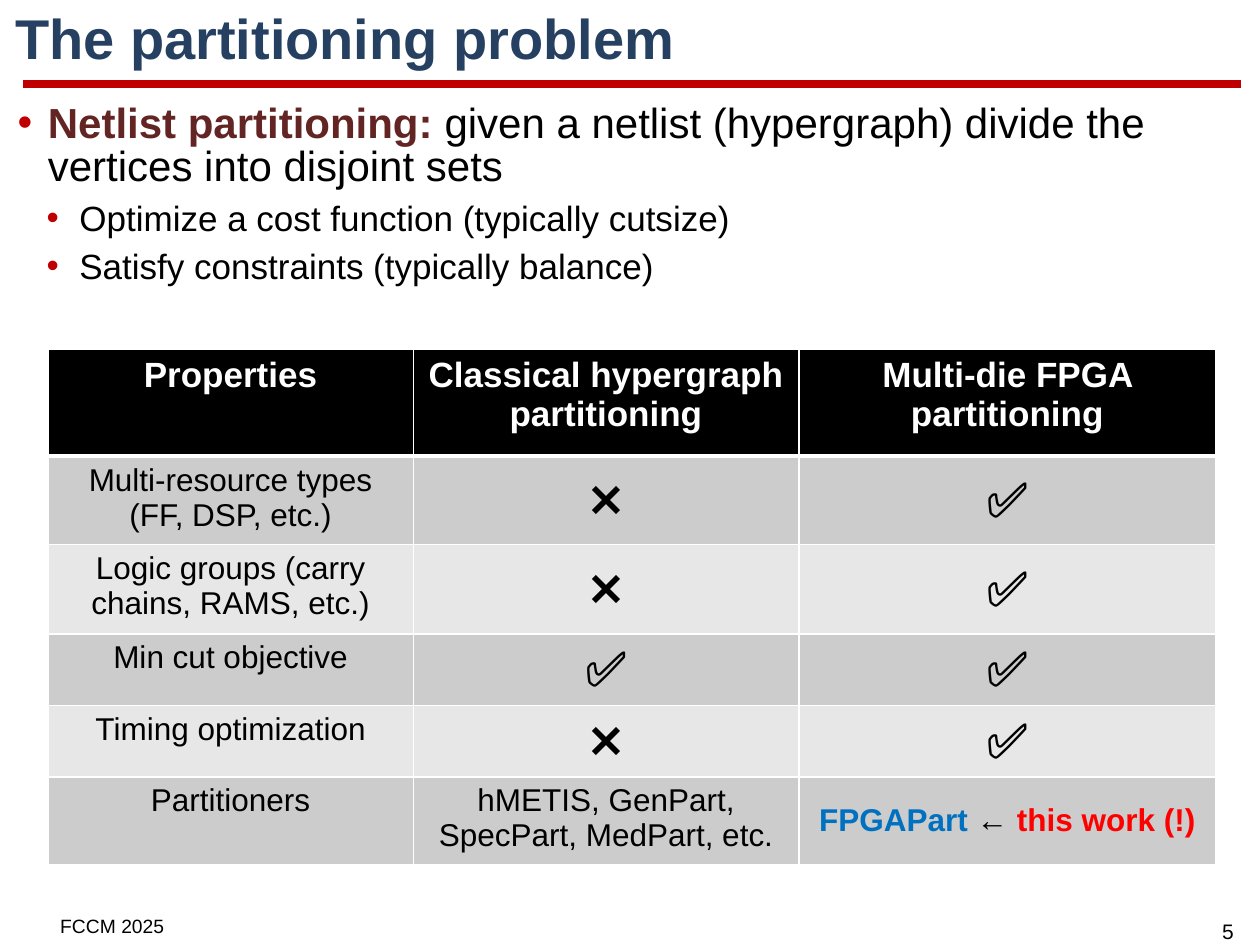
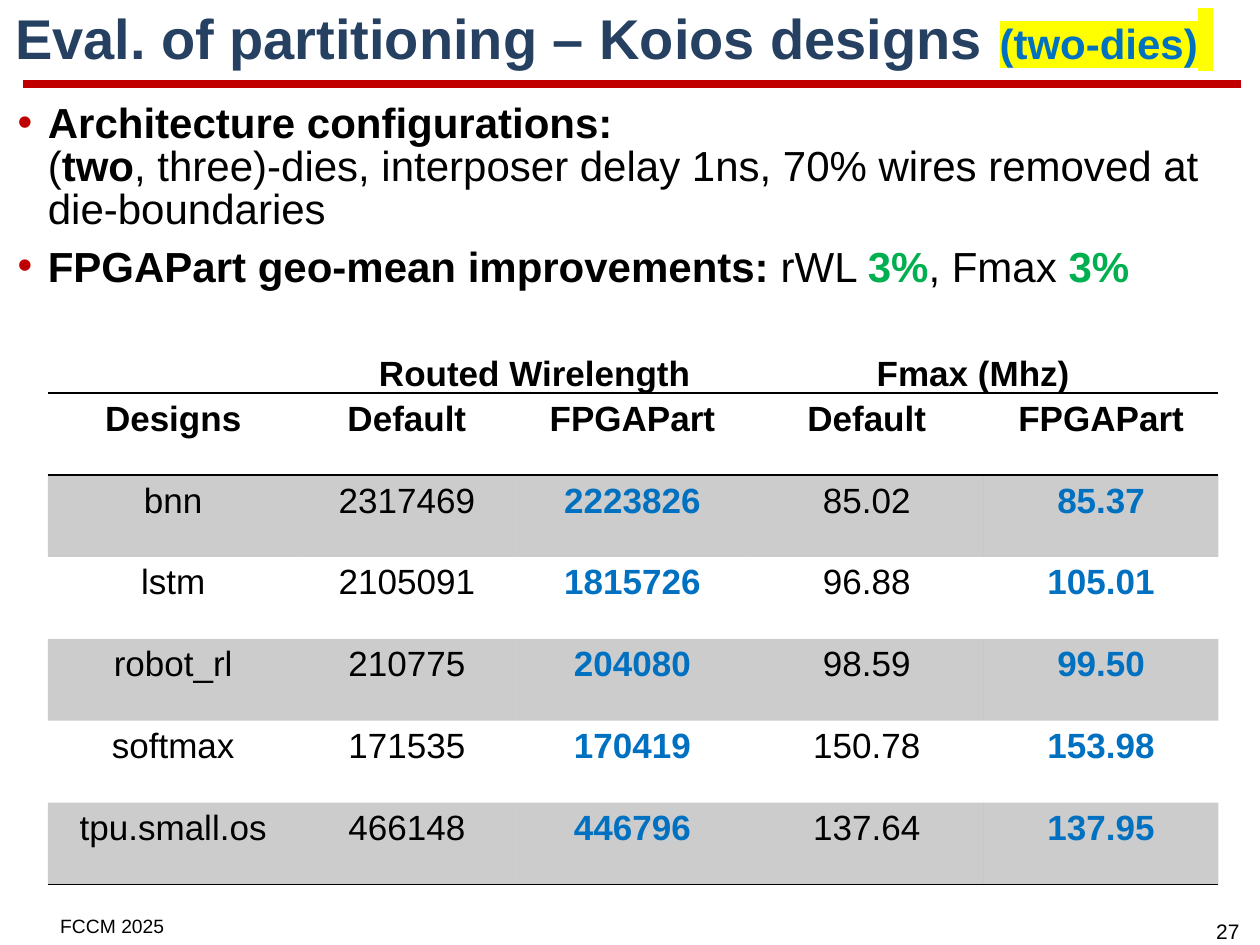
from dataclasses import dataclass
from typing import Optional

from lxml import etree
from pptx import Presentation
from pptx.dml.color import RGBColor
from pptx.enum.shapes import MSO_CONNECTOR
from pptx.enum.text import MSO_ANCHOR, MSO_AUTO_SIZE, PP_ALIGN
from pptx.oxml.ns import qn
from pptx.util import Inches, Pt

STRAIGHT = MSO_CONNECTOR.STRAIGHT
TOP, MIDDLE = MSO_ANCHOR.TOP, MSO_ANCHOR.MIDDLE
NO_AUTOFIT = MSO_AUTO_SIZE.NONE
LEFT, CENTER = PP_ALIGN.LEFT, PP_ALIGN.CENTER


class Theme:
    font = "Arial"
    black, white = "000000", "FFFFFF"
    navy, red, maroon = "254061", "C00000", "632523"
    blue, green, alert = "0070C0", "00B050", "FF0000"
    highlight = "FFFF00"
    bands = ("CCCCCC", "E7E7E7")
    title_size, body_sizes = 32, (24, 20)
    header_size, cell_size, mark_size = 20, 18, 28
    number_size, footer_size = 12, 11
    shade_alpha = 20


@dataclass
class Run:
    text: str
    color: str = Theme.black
    bold: bool = False
    size: Optional[int] = None
    highlight: Optional[str] = None


BREAK = Run("\n")
NO, YES = "❌", "✅"
FOOTER = "FCCM 2025"

PROBLEM = {
    "number": "5",
    "title": [Run("The partitioning problem", Theme.navy, True)],
    "bullets": [
        (0, [Run("Netlist partitioning:", Theme.maroon, True),
             Run(" given a netlist (hypergraph) divide the vertices into disjoint sets")]),
        (1, [Run("Optimize a cost function (typically cutsize)")]),
        (1, [Run("Satisfy constraints (typically balance)")]),
    ],
}
PROPERTY_HEADER = ["Properties", "Classical hypergraph partitioning",
                   "Multi-die FPGA partitioning"]
PROPERTY_ROWS = [
    ["Multi-resource types (FF, DSP, etc.)", NO, YES],
    ["Logic groups (carry chains, RAMS, etc.)", NO, YES],
    ["Min cut objective", YES, YES],
    ["Timing optimization", NO, YES],
    ["Partitioners", "hMETIS, GenPart, SpecPart, MedPart, etc.",
     [Run("FPGAPart ", Theme.blue, True), Run("← ", Theme.black, True),
      Run("this work (!)", Theme.alert, True)]],
]
PROPERTY_WIDTHS = [2.9, 3.06, 3.31]
PROPERTY_HEIGHTS = [0.85, 0.57, 0.71, 0.49, 0.48, 0.66]

EVALUATION = {
    "number": "27",
    "title": [Run("Eval. of partitioning – Koios designs ", Theme.navy, True),
              Run("(two-dies)", Theme.blue, True, 24, Theme.highlight),
              Run(" ", Theme.navy, True, None, Theme.highlight)],
    "bullets": [
        (0, [Run("Architecture configurations: ", bold=True), BREAK, Run("("),
             Run("two", bold=True),
             Run(", three)-dies, interposer delay 1ns, 70% wires removed at die-boundaries")]),
        (0, [Run("FPGAPart geo-mean improvements: ", bold=True), Run("rWL "),
             Run("3%", Theme.green, True), Run(", Fmax "), Run("3%", Theme.green, True)]),
    ],
}
METRICS = [("Routed Wirelength", 2.91), ("Fmax (Mhz)", 6.86)]
RESULT_HEADER = ["Designs", "Default", "FPGAPart", "Default", "FPGAPart"]
RESULT_ROWS = [
    ["bnn", "2317469", "2223826", "85.02", "85.37"],
    ["lstm", "2105091", "1815726", "96.88", "105.01"],
    ["robot_rl", "210775", "204080", "98.59", "99.50"],
    ["softmax", "171535", "170419", "150.78", "153.98"],
    ["tpu.small.os", "466148", "446796", "137.64", "137.95"],
]
RESULT_WIDTHS = [1.99, 1.72, 1.86, 1.86, 1.86]
RESULT_ROW_HEIGHT = 0.65


def set_font(font, run, size):
    font.name = Theme.font
    font.size = Pt(run.size or size)
    font.bold = run.bold
    font.color.rgb = RGBColor.from_string(run.color)


def add_highlight(run, color):
    highlight = etree.Element(qn("a:highlight"))
    etree.SubElement(highlight, qn("a:srgbClr"), val=color)
    run.font._element.find(qn("a:solidFill")).addnext(highlight)


def write_paragraph(paragraph, runs, size, alignment=LEFT):
    paragraph.alignment = alignment
    set_font(paragraph.font, runs[0], size)
    for item in runs:
        if item is BREAK:
            paragraph.add_line_break()
            continue
        run = paragraph.add_run()
        run.text = item.text
        if len(runs) > 1:
            set_font(run.font, item, size)
        if item.highlight:
            add_highlight(run, item.highlight)


def place(shape, left, top, width, height):
    shape.left, shape.top = Inches(left), Inches(top)
    shape.width, shape.height = Inches(width), Inches(height)


def add_label(slide, run, size, bounds, alignment=LEFT):
    box = slide.shapes.add_textbox(*map(Inches, bounds))
    box.text_frame.word_wrap = True
    write_paragraph(box.text_frame.paragraphs[0], [run], size, alignment)


def add_rule(slide):
    rule = slide.shapes.add_connector(
        STRAIGHT, Inches(0.18), Inches(0.67), Inches(9.85), Inches(0.67))
    rule.line.color.rgb = RGBColor.from_string(Theme.red)
    rule.line.width = Pt(4.5)
    etree.SubElement(rule._element.spPr, qn("a:effectLst"))


def add_bullet(paragraph, level):
    paragraph.level = level
    properties = paragraph._p.get_or_add_pPr()
    margin, indent = [(0.26, -0.24), (0.51, -0.26)][level]
    properties.set("marL", str(Inches(margin)))
    properties.set("indent", str(Inches(indent)))
    color = etree.SubElement(properties, qn("a:buClr"))
    etree.SubElement(color, qn("a:srgbClr"), val=Theme.red)
    etree.SubElement(properties, qn("a:buFont"), typeface=Theme.font)
    etree.SubElement(properties, qn("a:buChar"), char="•")


def fill_body(body, bullets):
    place(body, 0.02, 0.78, 9.83, 6.22)
    frame = body.text_frame
    frame.auto_size = NO_AUTOFIT
    for index, (level, runs) in enumerate(bullets):
        paragraph = frame.add_paragraph() if index else frame.paragraphs[0]
        size = Theme.body_sizes[level]
        add_bullet(paragraph, level)
        paragraph.line_spacing = 0.85
        paragraph.space_before = Pt(0.35 * size if index else 0)
        write_paragraph(paragraph, runs, size)


def add_content_slide(presentation, content):
    slide = presentation.slides.add_slide(presentation.slide_layouts[1])
    add_rule(slide)
    add_label(slide, Run(content["number"]), Theme.number_size,
              (9.5, 7.24, 0.49, 0.3), CENTER)
    add_label(slide, Run(FOOTER), Theme.footer_size, (0.38, 7.21, 1.87, 0.27))
    title = slide.shapes.title
    place(title, 0.02, 0.08, 9.93, 0.49)
    title.text_frame.auto_size = NO_AUTOFIT
    title.text_frame.vertical_anchor = MIDDLE
    title.text_frame.paragraphs[0].line_spacing = 0.9
    write_paragraph(title.text_frame.paragraphs[0], content["title"], Theme.title_size)
    fill_body(slide.placeholders[1], content["bullets"])
    return slide


def add_grid(slide, top, widths, heights):
    frame = slide.shapes.add_table(
        len(heights), len(widths), Inches(0.38), Inches(top),
        Inches(sum(widths)), Inches(sum(heights)))
    table = frame.table
    table.first_row = table.horz_banding = False
    for column, width in zip(table.columns, widths):
        column.width = Inches(width)
    for row, height in zip(table.rows, heights):
        row.height = Inches(height)
    return table


def set_borders(cell, borders):
    properties = cell._tc.get_or_add_tcPr()
    for position, side in enumerate("LRTB"):
        color, width = borders.get(side, (None, 0))
        line = etree.Element(qn(f"a:ln{side}"), w=str(Pt(width)))
        if color:
            fill = etree.SubElement(line, qn("a:solidFill"))
            etree.SubElement(fill, qn("a:srgbClr"), val=color)
        else:
            etree.SubElement(line, qn("a:noFill"))
        properties.insert(position, line)


def fill_cell(cell, color, alpha=None):
    if color is None:
        cell.fill.background()
        return
    cell.fill.solid()
    cell.fill.fore_color.rgb = RGBColor.from_string(color)
    if alpha:
        color_element = cell._tc.tcPr.find(".//" + qn("a:srgbClr"))
        etree.SubElement(color_element, qn("a:alpha"), val=str(alpha * 1000))


def write_cell(cell, runs, size, anchor=TOP):
    cell.vertical_anchor = anchor
    write_paragraph(cell.text_frame.paragraphs[0], runs, size, CENTER)


def add_property_table(slide):
    table = add_grid(slide, 2.77, PROPERTY_WIDTHS, PROPERTY_HEIGHTS)
    for row, values in enumerate([PROPERTY_HEADER] + PROPERTY_ROWS):
        for column, value in enumerate(values):
            cell = table.cell(row, column)
            borders = {side: (Theme.white, 1) for side in "LRTB"}
            if row == 0:
                borders["B"] = (Theme.white, 3)
                write_cell(cell, [Run(value, Theme.white, True)], Theme.header_size)
            elif value in (NO, YES):
                write_cell(cell, [Run(value)], Theme.mark_size, MIDDLE)
            elif isinstance(value, list):
                write_cell(cell, value, Theme.cell_size, MIDDLE)
            else:
                write_cell(cell, [Run(value)], Theme.cell_size)
            if row == 1:
                borders["T"] = (Theme.white, 3)
            fill_cell(cell, Theme.bands[(row - 1) % 2] if row else Theme.black)
            set_borders(cell, borders)


def add_result_table(slide):
    rows = [RESULT_HEADER] + RESULT_ROWS
    table = add_grid(slide, 3.12, RESULT_WIDTHS, [RESULT_ROW_HEIGHT] * len(rows))
    line = (Theme.black, 1)
    row_borders = {0: {"T": line, "B": line}, 1: {"T": line}, len(rows) - 1: {"B": line}}
    for row, values in enumerate(rows):
        for column, value in enumerate(values):
            cell = table.cell(row, column)
            ours = row > 0 and RESULT_HEADER[column] == "FPGAPart"
            run = Run(value, Theme.blue if ours else Theme.black, ours or row == 0)
            write_cell(cell, [run], Theme.header_size)
            fill_cell(cell, Theme.black if row % 2 else None, Theme.shade_alpha)
            set_borders(cell, row_borders.get(row, {}))


def main():
    presentation = Presentation()
    presentation.slide_width, presentation.slide_height = Inches(10), Inches(7.5)
    add_property_table(add_content_slide(presentation, PROBLEM))
    evaluation = add_content_slide(presentation, EVALUATION)
    add_result_table(evaluation)
    for metric, left in METRICS:
        add_label(evaluation, Run(metric, bold=True), Theme.header_size,
                  (left, 2.74, 10 - left if left > 6.66 else 3.34, 0.44))
    presentation.save("out.pptx")


if __name__ == "__main__":
    main()
